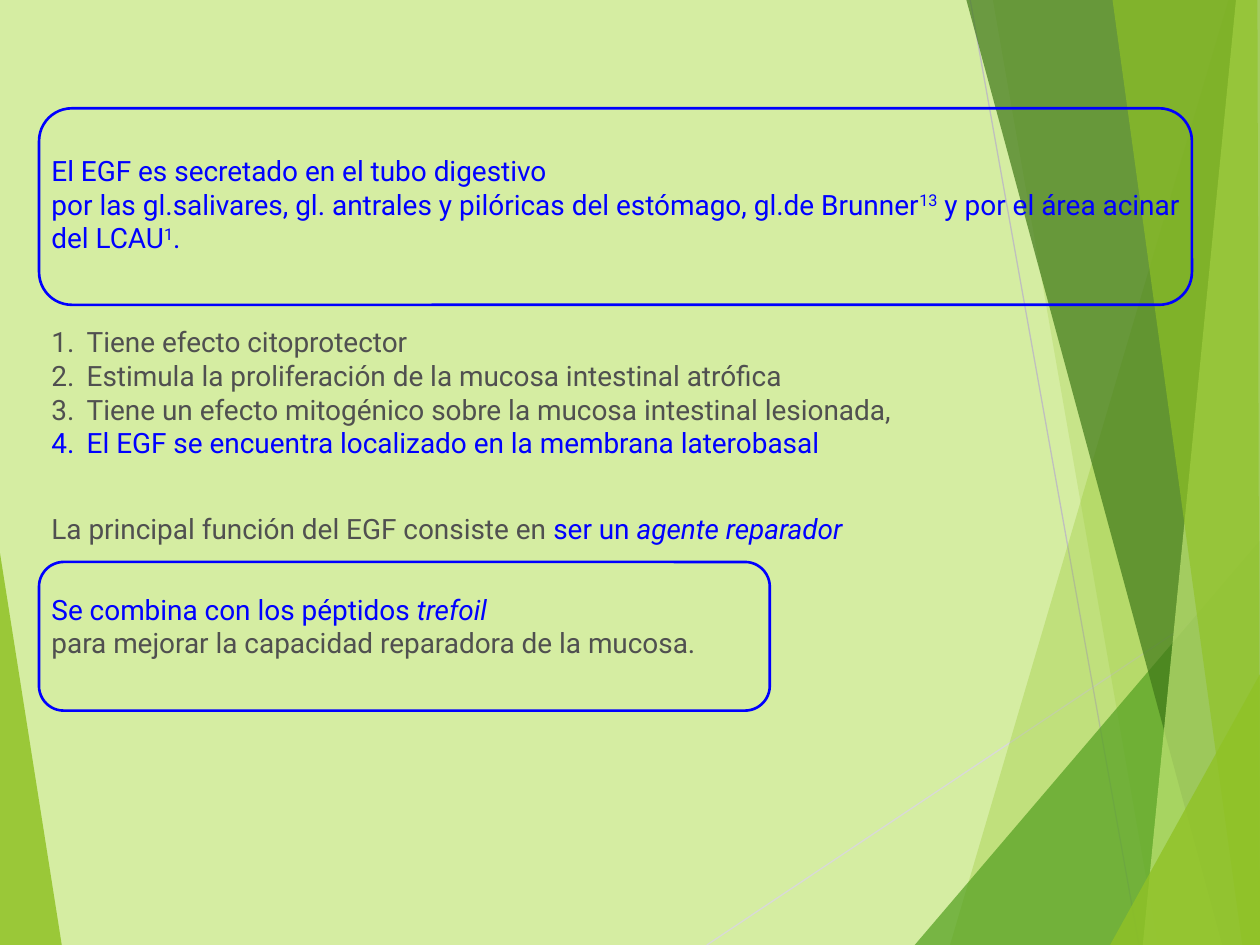
"""Build a slide on the secretion and functions of EGF."""
from typing import NamedTuple

from pptx import Presentation
from pptx.dml.color import RGBColor
from pptx.enum.shapes import MSO_CONNECTOR, MSO_SHAPE
from pptx.enum.text import MSO_AUTO_SIZE, PP_ALIGN
from pptx.oxml.ns import qn
from pptx.oxml.xmlchemy import OxmlElement
from pptx.slide import Slide
from pptx.util import Inches, Pt

STRAIGHT = MSO_CONNECTOR.STRAIGHT
ROUNDED = MSO_SHAPE.ROUNDED_RECTANGLE
FIT_SHAPE = MSO_AUTO_SIZE.SHAPE_TO_FIT_TEXT
LEFT, JUSTIFY = PP_ALIGN.LEFT, PP_ALIGN.JUSTIFY

COLUMNS, ROWS = 100, 75
WIDTH, HEIGHT = Inches(10), Inches(7.5)
BLANK_LAYOUT = 6
MARGIN = 3.1
INDENT = Inches(0.28)
FONT, TEXT_SIZE = "Roboto", Pt(16)
COLORS = {
    "background": "D5EDA2",
    "lime": "90C226",
    "green": "54A021",
    "forest": "3F7819",
    "pale": "C0E474",
    "silver": "D9D9D9",
    "gray": "BFBFBF",
    "text": "505050",
    "accent": "0000FF",
}


class Facet(NamedTuple):
    points: list[tuple[float, float]]
    color: str
    opacity: int


class Ray(NamedTuple):
    start: tuple[float, float]
    end: tuple[float, float]
    color: str


class Piece(NamedTuple):
    text: str
    color: str = "accent"
    italic: bool = False
    superscript: bool = False


class TextBlock(NamedTuple):
    top: float
    width: float
    height: float
    paragraphs: list[list[Piece]]
    numbered: bool = False
    alignment: PP_ALIGN = LEFT


class Frame(NamedTuple):
    top: float
    width: float
    height: float


RAYS = [
    Ray((56.1, ROWS), (COLUMNS, 45.7), "silver"),
    Ray((77, 0), (90.4, ROWS), "gray"),
]
FACETS = [
    Facet([(0, 43.9), (4.9, ROWS), (0, ROWS)], "lime", 85),
    Facet([(97.5, 0), (75.4, ROWS), (COLUMNS, ROWS), (COLUMNS, 0)], "lime", 30),
    Facet([(78.8, 0), (91.9, ROWS), (COLUMNS, ROWS), (COLUMNS, 0)], "lime", 20),
    Facet([(72.6, ROWS), (COLUMNS, 42.9), (COLUMNS, ROWS)], "green", 72),
    Facet([(76.7, 0), (97, ROWS), (COLUMNS, ROWS), (COLUMNS, 0)], "forest", 70),
    Facet([(98.1, 0), (90.7, ROWS), (COLUMNS, ROWS), (COLUMNS, 0)], "pale", 70),
    Facet([(88.3, 0), (98.6, ROWS), (COLUMNS, ROWS), (99.8, 0)], "lime", 65),
    Facet([(88.1, ROWS), (COLUMNS, 53.5), (COLUMNS, ROWS)], "lime", 80),
]
TEXT_BLOCKS = [
    TextBlock(25.3, 77.9, 11.8, [
        [Piece("Tiene efecto citoprotector", "text")],
        [Piece("Estimula la proliferación de la mucosa intestinal atrófica", "text")],
        [Piece("Tiene un efecto mitogénico sobre la mucosa intestinal lesionada,", "text")],
        [Piece("El EGF se encuentra localizado en la membrana laterobasal")],
    ], numbered=True),
    TextBlock(40.1, 72.6, 3.7, [
        [Piece("La principal función del EGF consiste en ", "text"),
         Piece("ser un "), Piece("agente reparador", italic=True)],
    ]),
    TextBlock(46.5, 76.2, 6.4, [
        [Piece("Se combina con los péptidos "), Piece("trefoil", italic=True)],
        [Piece("para mejorar la capacidad reparadora de la mucosa.", "text")],
    ]),
    TextBlock(11.7, 91.5, 9.1, [
        [Piece("El EGF es secretado en el tubo digestivo")],
        [Piece("por las gl.salivares, gl. antrales y pilóricas del estómago, gl.de Brunner"),
         Piece("13", superscript=True), Piece(" y por el área acinar del LCAU"),
         Piece("1", superscript=True), Piece(".")],
    ], alignment=JUSTIFY),
]
FRAMES = [Frame(44.6, 58, 11.8), Frame(8.6, 91.5, 15.6)]


def x(column: float) -> int:
    """Convert a grid column to a slide length."""
    return round(WIDTH * column / COLUMNS)


def y(row: float) -> int:
    """Convert a grid row to a slide length."""
    return round(HEIGHT * row / ROWS)


def rgb(name: str) -> RGBColor:
    """Look up a named colour."""
    return RGBColor.from_string(COLORS[name])


def draw_facet(slide: Slide, facet: Facet) -> None:
    """Draw a translucent background polygon."""
    points = [(x(column), y(row)) for column, row in facet.points]
    builder = slide.shapes.build_freeform(*points[0])
    builder.add_line_segments(points[1:], close=True)
    shape = builder.convert_to_shape()
    shape.shadow.inherit = False
    shape.fill.solid()
    shape.fill.fore_color.rgb = rgb(facet.color)
    alpha = OxmlElement("a:alpha")
    alpha.set("val", str(facet.opacity * 1000))
    shape._element.spPr.find(".//" + qn("a:srgbClr")).append(alpha)
    shape.line.fill.background()


def draw_ray(slide: Slide, ray: Ray) -> None:
    """Draw a thin background line."""
    (left, top), (right, bottom) = ray.start, ray.end
    connector = slide.shapes.add_connector(STRAIGHT, x(left), y(top), x(right), y(bottom))
    connector.line.color.rgb = rgb(ray.color)
    connector.line.width = Pt(0.75)
    connector._element.spPr.append(OxmlElement("a:effectLst"))


def draw_text(slide: Slide, block: TextBlock) -> None:
    """Draw a text block with its formatted runs."""
    shape = slide.shapes.add_textbox(x(MARGIN), y(block.top), x(block.width), y(block.height))
    frame = shape.text_frame
    frame.word_wrap = True
    frame.auto_size = FIT_SHAPE
    frame.text = "\n".join("" for _ in block.paragraphs)
    for paragraph, pieces in zip(frame.paragraphs, block.paragraphs):
        paragraph.alignment = block.alignment
        if block.numbered:
            properties = paragraph._p.get_or_add_pPr()
            properties.set("marL", str(INDENT))
            properties.set("indent", str(-INDENT))
            number = OxmlElement("a:buAutoNum")
            number.set("type", "arabicPeriod")
            properties.append(number)
        for piece in pieces:
            run = paragraph.add_run()
            run.text = piece.text
            run.font.name = FONT
            run.font.size = TEXT_SIZE
            run.font.italic = piece.italic
            run.font.color.rgb = rgb(piece.color)
            if piece.superscript:
                run._r.get_or_add_rPr().set("baseline", "30000")


def draw_frame(slide: Slide, frame: Frame) -> None:
    """Draw a rounded outline around a statement."""
    shape = slide.shapes.add_shape(
        ROUNDED, x(MARGIN), y(frame.top), x(frame.width), y(frame.height))
    shape.shadow.inherit = False
    shape.fill.background()
    shape.line.color.rgb = rgb("accent")
    shape.line.width = Pt(1.5)


def main() -> None:
    """Build and save the presentation."""
    presentation = Presentation()
    presentation.slide_width, presentation.slide_height = WIDTH, HEIGHT
    slide = presentation.slides.add_slide(presentation.slide_layouts[BLANK_LAYOUT])
    slide.background.fill.solid()
    slide.background.fill.fore_color.rgb = rgb("background")
    draw_facet(slide, FACETS[0])
    for ray in RAYS:
        draw_ray(slide, ray)
    for facet in FACETS[1:]:
        draw_facet(slide, facet)
    for block in TEXT_BLOCKS:
        draw_text(slide, block)
    for frame in FRAMES:
        draw_frame(slide, frame)
    presentation.save("out.pptx")


if __name__ == "__main__":
    main()
